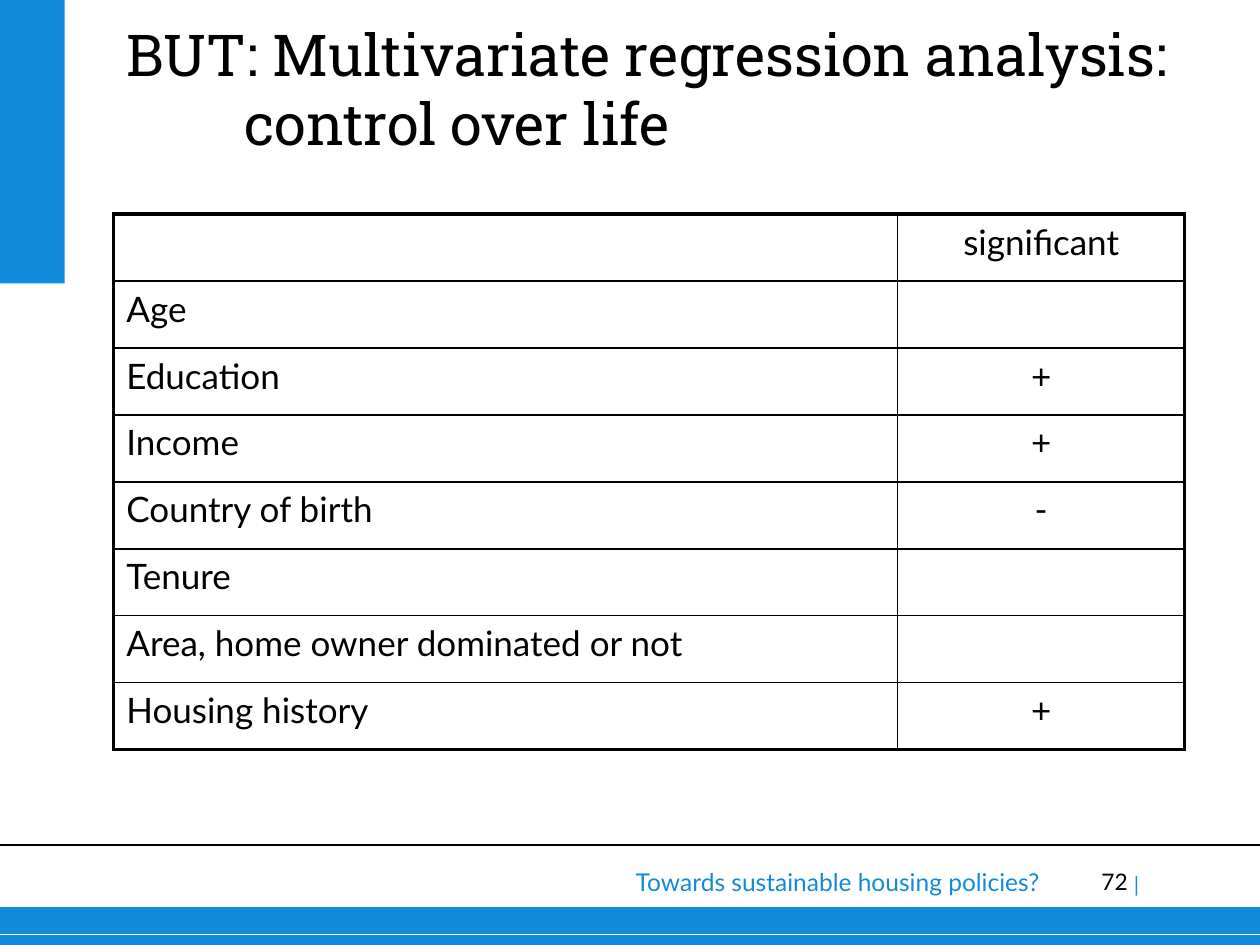
from pptx import Presentation
from pptx.dml.color import RGBColor
from pptx.enum.shapes import MSO_CONNECTOR, MSO_SHAPE
from pptx.enum.text import MSO_ANCHOR, MSO_AUTO_SIZE, PP_ALIGN
from pptx.oxml import parse_xml
from pptx.oxml.ns import nsdecls
from pptx.util import Pt

TITLE = "BUT: Multivariate regression analysis: control over life"
ROWS = [
    ("", "significant"),
    ("Age", ""),
    ("Education", "+"),
    ("Income", "+"),
    ("Country of birth", "-"),
    ("Tenure", ""),
    ("Area, home owner dominated or not", ""),
    ("Housing history", "+"),
]
# text, box (left, top, width, height), size, colour, alignment
FOOTER = [
    ("72", (602, 496, 42.4, 20), "page", "black", PP_ALIGN.RIGHT),
    ("Towards sustainable housing policies?", (253.5, 495.4, 561.3 - 220.5, 17),
     "foot", "blue", PP_ALIGN.RIGHT),
    ("|", (648, 498.2, 72, 14.4), "bar", "blue", PP_ALIGN.LEFT),
]


class Theme:
    head = "Roboto Slab"
    body = "Lato"
    color = {"blue": "108BD9", "black": "000000", "white": "FFFFFF"}
    size = {"title": 33, "cell": 20, "foot": 14, "page": 13, "bar": 12}
    thick, thin = 2.25, 1


def rgb(name):
    return RGBColor.from_string(Theme.color[name])


def style(para, face, size, color, align=PP_ALIGN.LEFT):
    para.alignment = align
    para.font.name = face
    para.font.size = Pt(Theme.size[size])
    para.font.color.rgb = rgb(color)


def block(shapes, box):
    rect = shapes.add_shape(MSO_SHAPE.RECTANGLE, *map(Pt, box))
    rect.shadow.inherit = False
    rect.fill.solid()
    rect.fill.fore_color.rgb = rgb("blue")
    rect.line.fill.background()


def rule(shapes, y, color, width):
    """Draw a line across the slide."""
    line = shapes.add_connector(MSO_CONNECTOR.STRAIGHT, 0, Pt(y), Pt(720), Pt(y))
    line.line.color.rgb = rgb(color)
    line.line.width = Pt(width)
    line._element.spPr.append(parse_xml(f"<a:effectLst {nsdecls('a')}/>"))


def label(shapes, text, box, size, color, align):
    frame = shapes.add_textbox(*map(Pt, box)).text_frame
    frame.word_wrap = True
    frame.margin_left = frame.margin_right = 0
    frame.margin_top = frame.margin_bottom = 0
    frame.text = text
    style(frame.paragraphs[0], Theme.body, size, color, align)


def border(cell, outer):
    """Edge a cell, thick on the sides named in outer."""
    props = cell._tc.get_or_add_tcPr()
    for spot, side in enumerate("LRTB"):
        width = Pt(Theme.thick if side in outer else Theme.thin)
        props.insert(spot, parse_xml(
            f'<a:ln{side} {nsdecls("a")} w="{width}"><a:solidFill>'
            f'<a:srgbClr val="{Theme.color["black"]}"/></a:solidFill></a:ln{side}>'))


def add_title(slide):
    title = slide.shapes.title
    title.left, title.top, title.width, title.height = map(Pt, (72, 5.8, 603.4, 84.2))
    frame = title.text_frame
    frame.text = TITLE
    frame.word_wrap = True
    frame.auto_size = MSO_AUTO_SIZE.NONE
    frame.vertical_anchor = MSO_ANCHOR.BOTTOM
    frame.margin_left = frame.margin_right = 0
    frame.margin_top = frame.margin_bottom = 0
    para = frame.paragraphs[0]
    style(para, Theme.head, "title", "black")
    props = para._p.get_or_add_pPr()
    props.set("marL", str(Pt(67.5)))
    props.set("indent", str(-Pt(67.5)))


def add_grid(shapes):
    last = len(ROWS) - 1
    grid = shapes.add_table(len(ROWS), 2, Pt(65), Pt(122.4), Pt(612), Pt(306)).table
    grid.first_row = grid.horz_banding = False
    for col, width in zip(grid.columns, (448, 164)):
        col.width = Pt(width)
    for r, row in enumerate(ROWS):
        for c, text in enumerate(row):
            cell = grid.cell(r, c)
            cell.fill.background()
            cell.text = text
            align = PP_ALIGN.CENTER if c else PP_ALIGN.LEFT
            style(cell.text_frame.paragraphs[0], Theme.body, "cell", "black", align)
            border(cell, "LR"[c] + "T" * (r == 0) + "B" * (r == last))


def main():
    deck = Presentation()
    deck.slide_width, deck.slide_height = Pt(720), Pt(540)
    slide = deck.slides.add_slide(deck.slide_layouts[5])
    shapes = slide.shapes
    block(shapes, (0, 518.4, 720, 21.6))
    block(shapes, (0, 0, 37, 162))
    rule(shapes, 534, "white", 0.75)
    rule(shapes, 483, "black", 1)
    for item in FOOTER:
        label(shapes, *item)
    add_title(slide)
    add_grid(shapes)
    deck.save("out.pptx")


if __name__ == "__main__":
    main()
